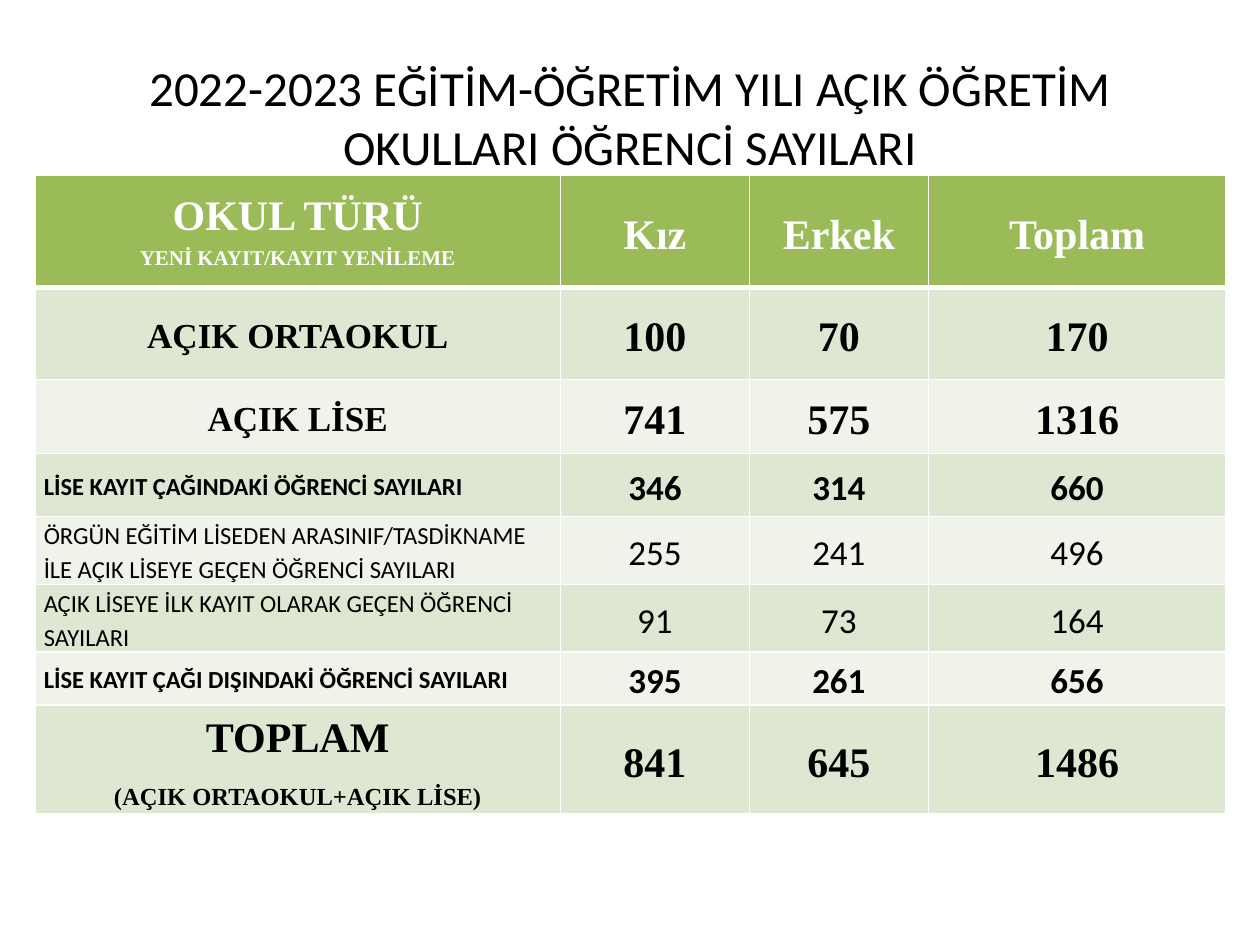
from lxml.etree import SubElement
from pptx import Presentation
from pptx.dml.color import RGBColor
from pptx.enum.text import MSO_ANCHOR, PP_ALIGN
from pptx.oxml.ns import qn
from pptx.util import Pt

WHITE = RGBColor(0xFF, 0xFF, 0xFF)
BLACK = RGBColor(0, 0, 0)
GREEN = RGBColor(0x9B, 0xBB, 0x59)
SAGE = RGBColor(0xDE, 0xE7, 0xD1)
MIST = RGBColor(0xEF, 0xF3, 0xEA)

SANS = "Calibri"
SERIF = "Times New Roman"
LEFT = PP_ALIGN.LEFT
MID = PP_ALIGN.CENTER

WIDTHS = [300.25, 108, 102.25, 170]
HEIGHTS = [64, 52.5, 42.5, 36, 38.25, 38.25, 30.25, 62.5]

HEAD = ([("OKUL TÜRÜ", 24), ("YENİ KAYIT/KAYIT YENİLEME", 12)],
        ["Kız", "Erkek", "Toplam"], 24, SERIF, True, MID)
ROWS = [
    HEAD,
    ([("AÇIK ORTAOKUL", 20)], ["100", "70", "170"], 24, SERIF, True, MID),
    ([("AÇIK LİSE", 20)], ["741", "575", "1316"], 24, SERIF, True, MID),
    ([("LİSE KAYIT ÇAĞINDAKİ ÖĞRENCİ SAYILARI", 14)],
     ["346", "314", "660"], 20, SANS, True, LEFT),
    ([("ÖRGÜN EĞİTİM LİSEDEN ARASINIF/TASDİKNAME İLE AÇIK LİSEYE "
       "GEÇEN ÖĞRENCİ SAYILARI", 14)],
     ["255", "241", "496"], 20, SANS, False, LEFT),
    ([("AÇIK LİSEYE İLK KAYIT OLARAK GEÇEN ÖĞRENCİ SAYILARI", 14)],
     ["91", "73", "164"], 20, SANS, False, LEFT),
    ([("LİSE KAYIT ÇAĞI DIŞINDAKİ ÖĞRENCİ SAYILARI", 14)],
     ["395", "261", "656"], 20, SANS, True, LEFT),
    ([("TOPLAM", 24), ("(AÇIK ORTAOKUL+AÇIK LİSE)", 14)],
     ["841", "645", "1486"], 24, SERIF, True, MID),
]


class Deck:
    def __init__(self, wide, high):
        self.show = Presentation()
        self.show.slide_width = Pt(wide)
        self.show.slide_height = Pt(high)
        self.slide = self.show.slides.add_slide(self.show.slide_layouts[6])

    def text(self, frame, lines, font, color, bold=False, align=MID,
             pitch=1, after=0):
        for i, (words, size) in enumerate(lines):
            para = frame.add_paragraph() if i else frame.paragraphs[0]
            para.alignment = align
            para.line_spacing = pitch
            para.space_after = Pt(after)
            run = para.add_run()
            run.text = words
            run.font.name = font
            run.font.size = Pt(size)
            run.font.bold = bold
            run.font.color.rgb = color

    def title(self, box, words, size):
        frame = self.slide.shapes.add_textbox(*map(Pt, box)).text_frame
        frame.word_wrap = True
        frame.vertical_anchor = MSO_ANCHOR.MIDDLE
        self.text(frame, [(words, size)], SANS, BLACK)

    def edge(self, cell, side, width):
        props = cell._tc.get_or_add_tcPr()
        line = SubElement(props, qn("a:ln" + side), w=str(Pt(width)))
        fill = SubElement(line, qn("a:solidFill"))
        SubElement(fill, qn("a:srgbClr"), val=str(WHITE))

    def cell(self, cell, row, lines, font, bold, align):
        for side in "LRTB":
            thick = (row, side) in [(0, "B"), (1, "T")]
            self.edge(cell, side, 3 if thick else 1)
        cell.fill.solid()
        cell.fill.fore_color.rgb = (MIST, SAGE)[row % 2] if row else GREEN
        cell.vertical_anchor = MSO_ANCHOR.MIDDLE
        cell.margin_left = cell.margin_right = Pt(5)
        cell.margin_top = cell.margin_bottom = 0
        tight = row == 0 and len(lines) > 1
        self.text(cell.text_frame, lines, font, BLACK if row else WHITE,
                  bold, align, 1 if tight else 1.15, 4 if tight else 10)

    def table(self, left, top):
        box = map(Pt, (left, top, sum(WIDTHS), sum(HEIGHTS)))
        grid = self.slide.shapes.add_table(len(ROWS), len(WIDTHS), *box).table
        for col, width in zip(grid.columns, WIDTHS):
            col.width = Pt(width)
        for row, height in zip(grid.rows, HEIGHTS):
            row.height = Pt(height)
        for r, (label, counts, size, font, bold, align) in enumerate(ROWS):
            self.cell(grid.cell(r, 0), r, label, font, bold, align)
            for c, count in enumerate(counts, 1):
                self.cell(grid.cell(r, c), r, [(count, size)], font, bold, MID)


def main():
    deck = Deck(720, 540)
    deck.title((36, 21.6, 648, 90),
               "2022-2023 EĞİTİM-ÖĞRETİM YILI AÇIK ÖĞRETİM "
               "OKULLARI ÖĞRENCİ SAYILARI", 28)
    deck.table(20, 100.25)
    deck.show.save("out.pptx")


if __name__ == "__main__":
    main()
